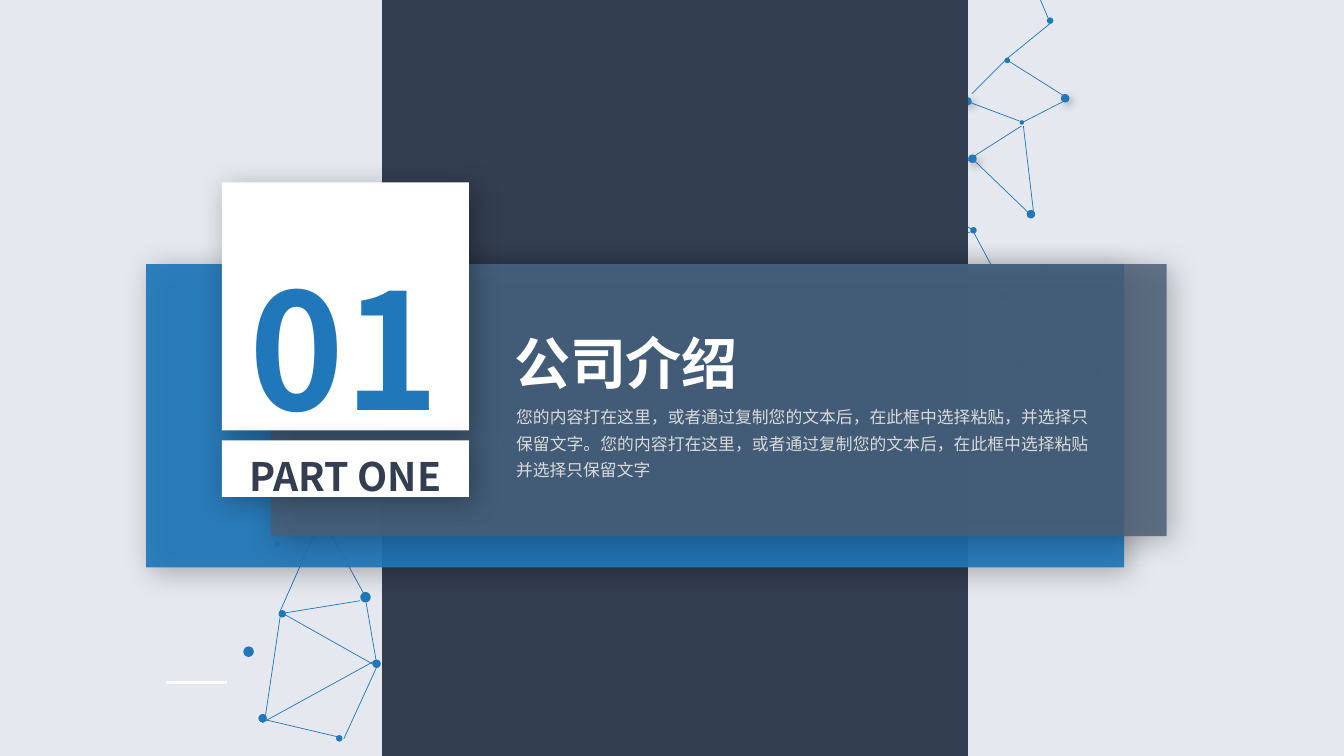
from lxml.etree import SubElement
from pptx import Presentation
from pptx.dml.color import RGBColor
from pptx.enum.shapes import MSO_CONNECTOR as Connector, MSO_SHAPE as Shape
from pptx.enum.text import MSO_ANCHOR as Anchor, MSO_AUTO_SIZE as AutoSize, PP_ALIGN as Align
from pptx.oxml.ns import qn
from pptx.util import Cm, Pt

BLUE, NAVY, SLATE, WHITE = "2077B9", "333E51", "4B5E75", "FFFFFF"
PALE, GREY, BLACK, CHARCOAL = "E5E9EF", "D9D9D9", "000000", "404040"
HEAVY = "Noto Sans CJK SC"
NARROW = "Arial Narrow"

PANEL_SHADOW = (BLACK, 30, 20, 5)
DOT_SHADOW = (CHARCOAL, 40, 6, 3)

UPPER_LINKS = [
    (10.01, 0.61, 10.55, 0.95), (10.32, 0, 10.4, 0.19), (10.42, 0.23, 9.99, 0.58),
    (9.97, 0.6, 9.64, 0.93), (9.63, 1.02, 10.11, 1.2), (9.66, 1.55, 10.13, 1.25),
    (9.61, 1.59, 9.19, 1.86), (10.25, 2.1, 10.15, 1.25), (9.67, 1.6, 10.2, 2.11),
    (10.15, 1.21, 10.54, 1.01), (9.08, 1.95, 9.63, 2.27), (9.66, 2.31, 9.98, 2.91),
    (9.64, 2.3, 8.57, 2.46), (9.94, 2.96, 9.18, 3.2),
]
UPPER_NODES = [
    (10.39, 0.18, 0.05), (10.19, 2.09, 0.07), (9.97, 0.58, 0.04), (10.12, 1.2, 0.03),
    (9.63, 2.26, 0.05), (9.92, 2.9, 0.07), (10.07, 3.55, 0.1), (10.85, 3.65, 0.07),
    (10.35, 2.65, 0.04),
]
RAISED_NODES = [(9.56, 0.97, 0.07), (9.61, 1.54, 0.07), (10.53, 0.94, 0.07)]
LOWER_LINKS = [
    (3.63, 5.97, 3.73, 6.55), (3.41, 7.33, 3.74, 6.61), (2.63, 7.12, 2.78, 6.11),
    (2.6, 7.17, 3.71, 6.56), (3.7, 6.59, 2.83, 6.1), (3.35, 7.31, 2.63, 7.14),
    (2.83, 6.08, 3.57, 5.96), (3.22, 5.18, 3.63, 5.93), (3.17, 5.18, 2.78, 6.06),
    (3.53, 4.66, 3.23, 5.15), (3.58, 4.67, 3.91, 5.22),
]
LOWER_NODES = [
    (3.7, 6.55, 0.07), (3.34, 7.3, 0.05), (2.77, 6.06, 0.06), (3.16, 5.12, 0.07),
    (2.57, 7.09, 0.07), (3.58, 5.88, 0.09), (2.42, 6.42, 0.09), (2.73, 5.38, 0.04),
]


def color(value):
    return RGBColor.from_string(value)


def lengths(*inches):
    return [Cm(2.54 * inch) for inch in inches]


class SectionSlide:
    """Draws the elements of a section opener in one shared style."""

    def __init__(self, deck):
        self.slide = deck.slides.add_slide(deck.slide_layouts[6])
        self.shapes = self.slide.shapes
        backdrop = self.slide.background.fill
        backdrop.solid()
        backdrop.fore_color.rgb = color(PALE)

    def line(self, ends, tint=BLUE, weight=0.5):
        link = self.shapes.add_connector(Connector.STRAIGHT, *lengths(*ends))
        link.line.color.rgb = color(tint)
        link.line.width = Pt(weight)
        SubElement(link._element.spPr, qn("a:effectLst"))

    def solid(self, kind, box, tint, opacity=100, shadow=None):
        solid = self.shapes.add_shape(kind, *lengths(*box))
        solid.fill.solid()
        solid.fill.fore_color.rgb = color(tint)
        solid.line.fill.background()
        solid.shadow.inherit = False
        properties = solid._element.spPr
        if opacity < 100:
            tone = properties.find(qn("a:solidFill"))[0]
            SubElement(tone, qn("a:alpha"), val=str(opacity * 1000))
        if shadow:
            shade, strength, blur, distance = shadow
            outer = SubElement(
                properties.find(qn("a:effectLst")), qn("a:outerShdw"),
                blurRad=str(Pt(blur)), dist=str(Pt(distance)),
                dir=str(45 * 60000), algn="tl", rotWithShape="0")
            tone = SubElement(outer, qn("a:srgbClr"), val=shade)
            SubElement(tone, qn("a:alpha"), val=str(strength * 1000))
        return solid

    def panel(self, box, tint, opacity=100, shadow=PANEL_SHADOW):
        return self.solid(Shape.RECTANGLE, box, tint, opacity, shadow)

    def node(self, spot, shadow=None):
        left, top, size = spot
        node = self.solid(Shape.OVAL, (left, top, size, size), BLUE, shadow=shadow)
        node.line.color.rgb = color(BLUE)
        node.line.width = Pt(1)

    def network(self, links, nodes, raised=()):
        for ends in links:
            self.line(ends)
        for spot in nodes:
            self.node(spot)
        for spot in raised:
            self.node(spot, DOT_SHADOW)

    def add_words(self, frame, words, size, tint, font=HEAVY, bold=True, align=Align.LEFT):
        frame.word_wrap = True
        paragraph = frame.paragraphs[0]
        paragraph.alignment = align
        paragraph.line_spacing = 1.3
        run = paragraph.add_run()
        run.text = words
        run.font.size = Pt(size)
        run.font.bold = bold
        run.font.color.rgb = color(tint)
        run.font.name = font
        SubElement(run._r.get_or_add_rPr(), qn("a:ea"), typeface=HEAVY)

    def text(self, box, *content, **style):
        frame = self.shapes.add_textbox(*lengths(*box)).text_frame
        self.add_words(frame, *content, **style)
        frame.auto_size = AutoSize.SHAPE_TO_FIT_TEXT


def main():
    deck = Presentation()
    deck.slide_width, deck.slide_height = lengths(13.33, 7.5)
    opener = SectionSlide(deck)

    opener.network(UPPER_LINKS, UPPER_NODES, RAISED_NODES)
    opener.network(LOWER_LINKS, LOWER_NODES)
    opener.panel((3.79, 0, 5.81, 7.5), NAVY, shadow=None)
    opener.panel((1.45, 2.62, 9.7, 3.01), BLUE, 93)
    opener.line((1.65, 6.77, 2.25, 6.77), WHITE, 2.25)
    opener.panel((2.69, 2.62, 8.88, 2.7), SLATE, 84)

    opener.panel((2.2, 1.81, 2.45, 2.46), WHITE)
    opener.text((1.95, 1.85, 2.94, 2.59), "01", 115, BLUE, align=Align.CENTER)
    opener.text((5, 3.01, 4.65, 0.97), "公司介绍", 40, WHITE)
    opener.text(
        (5.02, 3.93, 5.88, 0.88),
        "您的内容打在这里，或者通过复制您的文本后，在此框中选择粘贴，并选择只保留文字。"
        "您的内容打在这里，或者通过复制您的文本后，在此框中选择粘贴并选择只保留文字",
        12, GREY, font=NARROW, bold=False, align=Align.JUSTIFY)

    part_label = opener.panel((2.2, 4.37, 2.45, 0.56), WHITE).text_frame
    part_label.vertical_anchor = Anchor.MIDDLE
    opener.add_words(part_label, "PART ONE", 28, NAVY, align=Align.CENTER)

    deck.save("out.pptx")


if __name__ == "__main__":
    main()
